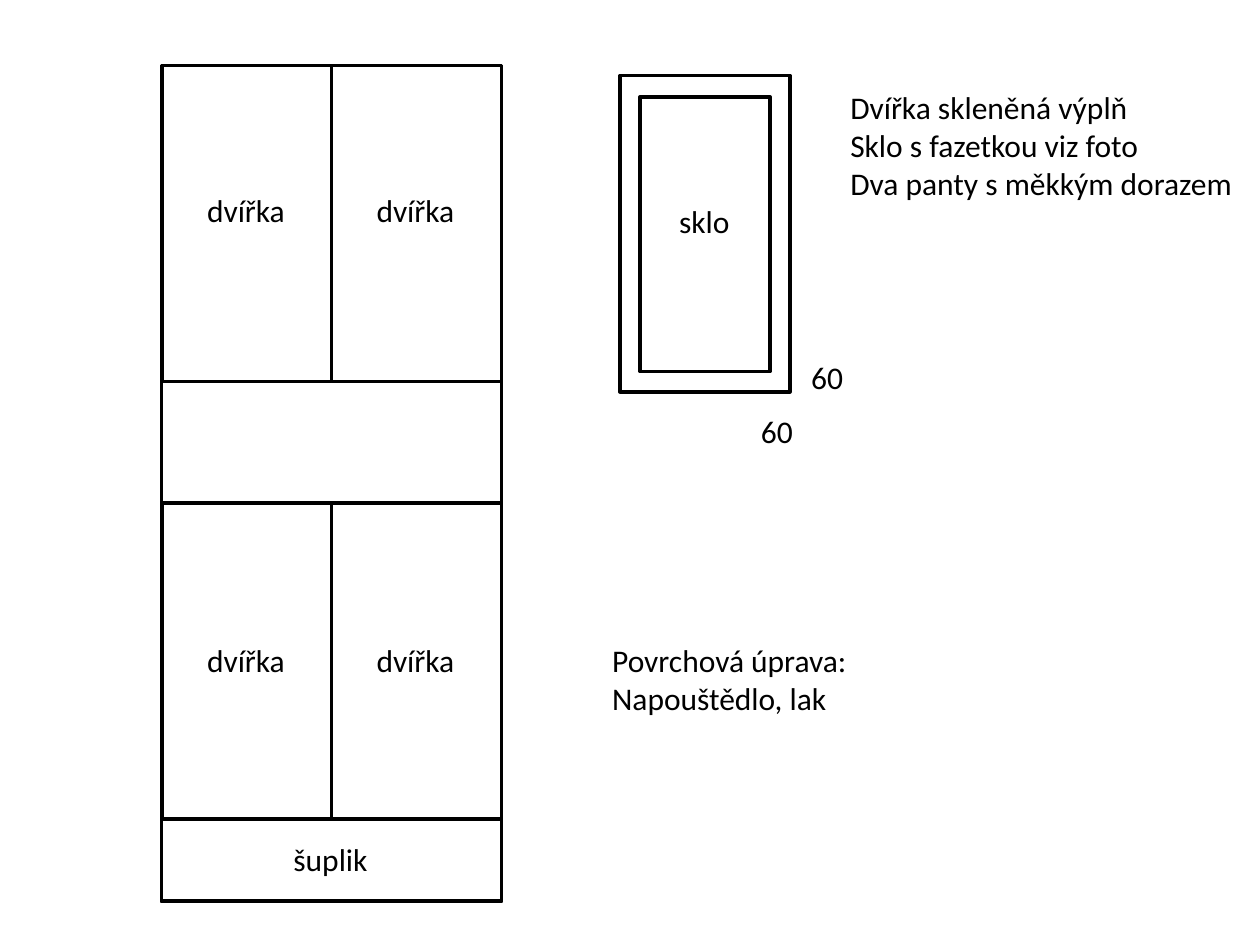
from dataclasses import dataclass

from pptx import Presentation
from pptx import util as u
from pptx.dml.color import RGBColor
from pptx.enum import shapes, text

COLORS = {"ink": "000000"}
FONT = "Calibri"
FONT_SIZE = 18
LINE_WIDTH = 2
LABEL_HEIGHT = 29.1


@dataclass(frozen=True)
class Panel:
    left: float
    top: float
    width: float
    height: float


@dataclass(frozen=True)
class Label:
    left: float
    top: float
    width: float
    height: float
    lines: tuple[str, ...]


def draw_panel(slide, panel: Panel) -> None:
    outline = slide.shapes.add_shape(
        shapes.MSO_SHAPE.RECTANGLE,
        u.Pt(panel.left), u.Pt(panel.top), u.Pt(panel.width), u.Pt(panel.height),
    )
    outline.shadow.inherit = False
    outline.fill.background()
    outline.line.color.rgb = RGBColor.from_string(COLORS["ink"])
    outline.line.width = u.Pt(LINE_WIDTH)


def draw_label(slide, label: Label) -> None:
    frame = slide.shapes.add_textbox(
        u.Pt(label.left), u.Pt(label.top), u.Pt(label.width), u.Pt(label.height)
    ).text_frame
    frame.word_wrap = False
    frame.auto_size = text.MSO_AUTO_SIZE.SHAPE_TO_FIT_TEXT
    for index, line in enumerate(label.lines):
        paragraph = frame.add_paragraph() if index else frame.paragraphs[0]
        run = paragraph.add_run()
        run.text = line
        run.font.name = FONT
        run.font.size = u.Pt(FONT_SIZE)
        run.font.color.rgb = RGBColor.from_string(COLORS["ink"])


def label_in(panel: Panel, caption: str, width: float, drop: float) -> Label:
    left = panel.left + (panel.width - width) / 2
    return Label(left, panel.top + drop, width, LABEL_HEIGHT, (caption,))


def main() -> None:
    deck = Presentation()
    deck.slide_width, deck.slide_height = u.Pt(720), u.Pt(540)
    slide = deck.slides.add_slide(deck.slide_layouts[6])

    cabinet = Panel(92.2, 37.4, 194.4, 477.4)
    drawer = Panel(92.2, 468, 194.4, 46.8)
    door_height = 180.7
    door_columns = ((92.9, 96.5), (189.4, 97.2))
    door_rows = ((37.4, 68.4), (287.3, 75.6))
    door_frame = Panel(354.2, 43.2, 97.2, door_height)
    glass = Panel(365.8, 55.4, 74.2, 157)

    panels = [cabinet, drawer, door_frame, glass]
    labels = [
        label_in(drawer, "šuplik", 57.6, 8.6),
        label_in(glass, "sklo", 43.9, 56.2),
        Label(427.7, 231.8, 33.1, LABEL_HEIGHT, ("60",)),
        Label(456.5, 200.9, 33.1, LABEL_HEIGHT, ("60",)),
        Label(478.8, 46.8, 235.4, 72.7, (
            "Dvířka skleněná výplň",
            "Sklo s fazetkou viz foto",
            "Dva panty s měkkým dorazem",
        )),
        Label(342.7, 362.9, 149.8, 50.9, ("Povrchová úprava:", "Napouštědlo, lak")),
    ]
    for top, drop in door_rows:
        for left, width in door_columns:
            door = Panel(left, top, width, door_height)
            panels.append(door)
            labels.append(label_in(door, "dvířka", 59.8, drop))

    for panel in panels:
        draw_panel(slide, panel)
    for label in labels:
        draw_label(slide, label)

    deck.save("out.pptx")


if __name__ == "__main__":
    main()
